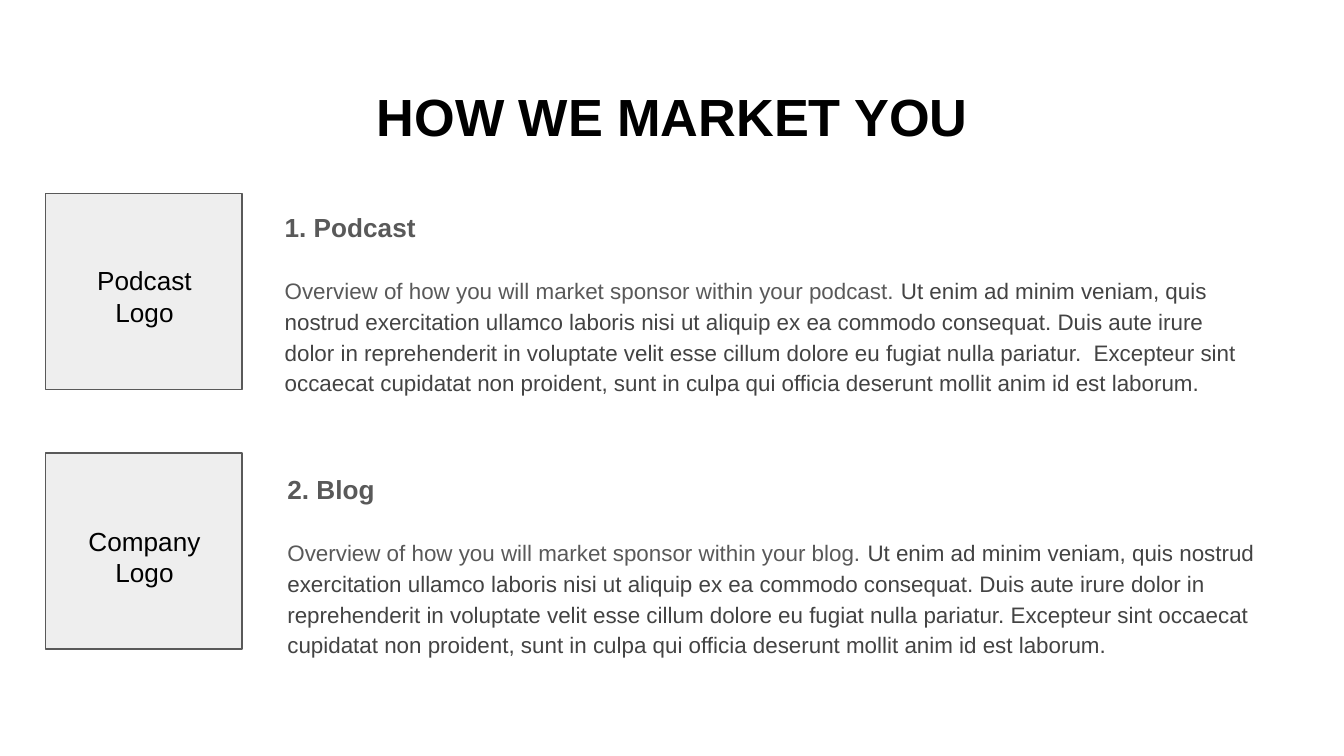
from pptx import Presentation
from pptx.dml.color import RGBColor
from pptx.enum.shapes import MSO_SHAPE
from pptx.enum.text import MSO_ANCHOR, PP_ALIGN
from pptx.util import Inches, Pt

RECTANGLE = MSO_SHAPE.RECTANGLE
TOP = MSO_ANCHOR.TOP
LEFT, CENTER = PP_ALIGN.LEFT, PP_ALIGN.CENTER

BLACK = RGBColor(0x00, 0x00, 0x00)
WHITE = RGBColor(0xFF, 0xFF, 0xFF)
PALE = RGBColor(0xEE, 0xEE, 0xEE)
GRAY = RGBColor(0x59, 0x59, 0x59)
DARK = RGBColor(0x43, 0x43, 0x43)

FONT = "Arial"
WIDTH = Inches(10)
HEIGHT = WIDTH * 9 // 16
COLUMNS, ROWS = 100, 56.25
MARGIN = 3.4
TILE = 14.6

LATIN_START = "Ut enim ad minim veniam, quis nostrud exercitation ullamco laboris nisi ut aliquip ex ea commodo consequat. Duis aute irure dolor in reprehenderit in voluptate velit esse cillum dolore eu fugiat nulla pariatur."
LATIN_END = "Excepteur sint occaecat cupidatat non proident, sunt in culpa qui officia deserunt mollit anim id est laborum."

CHANNELS = [
    {
        "logo": ("Podcast", "Logo"),
        "heading": "1. Podcast",
        "overview": "Overview of how you will market sponsor within your podcast. ",
        "detail": f"{LATIN_START}  {LATIN_END}",
        "tile_row": 14.4,
        "label_row": 18.7,
        "text_at": (20.2, 14.4),
    },
    {
        "logo": ("Company", "Logo"),
        "heading": "2. Blog",
        "overview": "Overview of how you will market sponsor within your blog. ",
        "detail": f"{LATIN_START} {LATIN_END}",
        "tile_row": 33.7,
        "label_row": 38.1,
        "text_at": (20.4, 33.9),
    },
]


def add_span(para, text, size=14, color=BLACK, bold=False):
    """Add formatted text to a paragraph."""
    span = para.add_run()
    span.text = text
    span.font.name = FONT
    span.font.size = Pt(size)
    span.font.bold = bold
    span.font.color.rgb = color


class MarketingSlide:
    """Hold the style and the current page."""

    def __init__(self, deck):
        """Add a white title-only page to the deck."""
        self.page = deck.slides.add_slide(deck.slide_layouts[5])
        self.page.background.fill.solid()
        self.page.background.fill.fore_color.rgb = WHITE

    def place(self, column, row, columns, rows):
        """Turn grid units into left, top, width and height."""
        return (
            round(WIDTH * column / COLUMNS),
            round(HEIGHT * row / ROWS),
            round(WIDTH * columns / COLUMNS),
            round(HEIGHT * rows / ROWS),
        )

    def fill_frame(self, box, paragraphs, align=LEFT, line_spacing=1.0, gap=0):
        """Write paragraphs, each a list of text and format pairs."""
        frame = box.text_frame
        frame.word_wrap = True
        frame.vertical_anchor = TOP
        frame.margin_left = frame.margin_right = Inches(0.1)
        frame.margin_top = frame.margin_bottom = Inches(0.1)
        for index, spans in enumerate(paragraphs):
            para = frame.add_paragraph() if index else frame.paragraphs[0]
            para.alignment = align
            para.line_spacing = line_spacing
            para.space_before = Pt(gap if index else 0)
            for text, style in spans:
                add_span(para, text, **style)

    def title(self, text, *area):
        """Move and format the title placeholder."""
        box = self.page.shapes.title
        box.left, box.top, box.width, box.height = self.place(*area)
        self.fill_frame(box, [[(text, {"size": 28, "bold": True})]], align=CENTER)

    def text(self, paragraphs, *area, **layout):
        """Add a text box."""
        box = self.page.shapes.add_textbox(*self.place(*area))
        self.fill_frame(box, paragraphs, **layout)

    def tile(self, column, row):
        """Add a square that stands for a logo."""
        box = self.page.shapes.add_shape(RECTANGLE, *self.place(column, row, TILE, TILE))
        box.shadow.inherit = False
        box.fill.solid()
        box.fill.fore_color.rgb = PALE
        box.line.color.rgb = GRAY
        box.line.width = Pt(0.75)

    def channel(self, logo, heading, overview, detail, tile_row, label_row, text_at):
        """Add a labelled tile with its description."""
        self.tile(MARGIN, tile_row)
        label = [[(word, {})] for word in logo]
        self.text(label, MARGIN + 0.1, label_row, 14.5, 5.8, align=CENTER)
        description = [
            [(heading, {"color": GRAY, "bold": True})],
            [
                (overview, {"size": 12, "color": GRAY}),
                (detail, {"size": 12, "color": DARK}),
            ],
        ]
        self.text(description, *text_at, 74.4, TILE, line_spacing=1.15, gap=16)


def main():
    """Build and save the deck."""
    deck = Presentation()
    deck.slide_width, deck.slide_height = WIDTH, HEIGHT
    slide = MarketingSlide(deck)
    slide.title("HOW WE MARKET YOU", MARGIN, 5.3, COLUMNS - 2 * MARGIN, 6.3)
    for channel in CHANNELS:
        slide.channel(**channel)
    deck.save("out.pptx")


if __name__ == "__main__":
    main()
